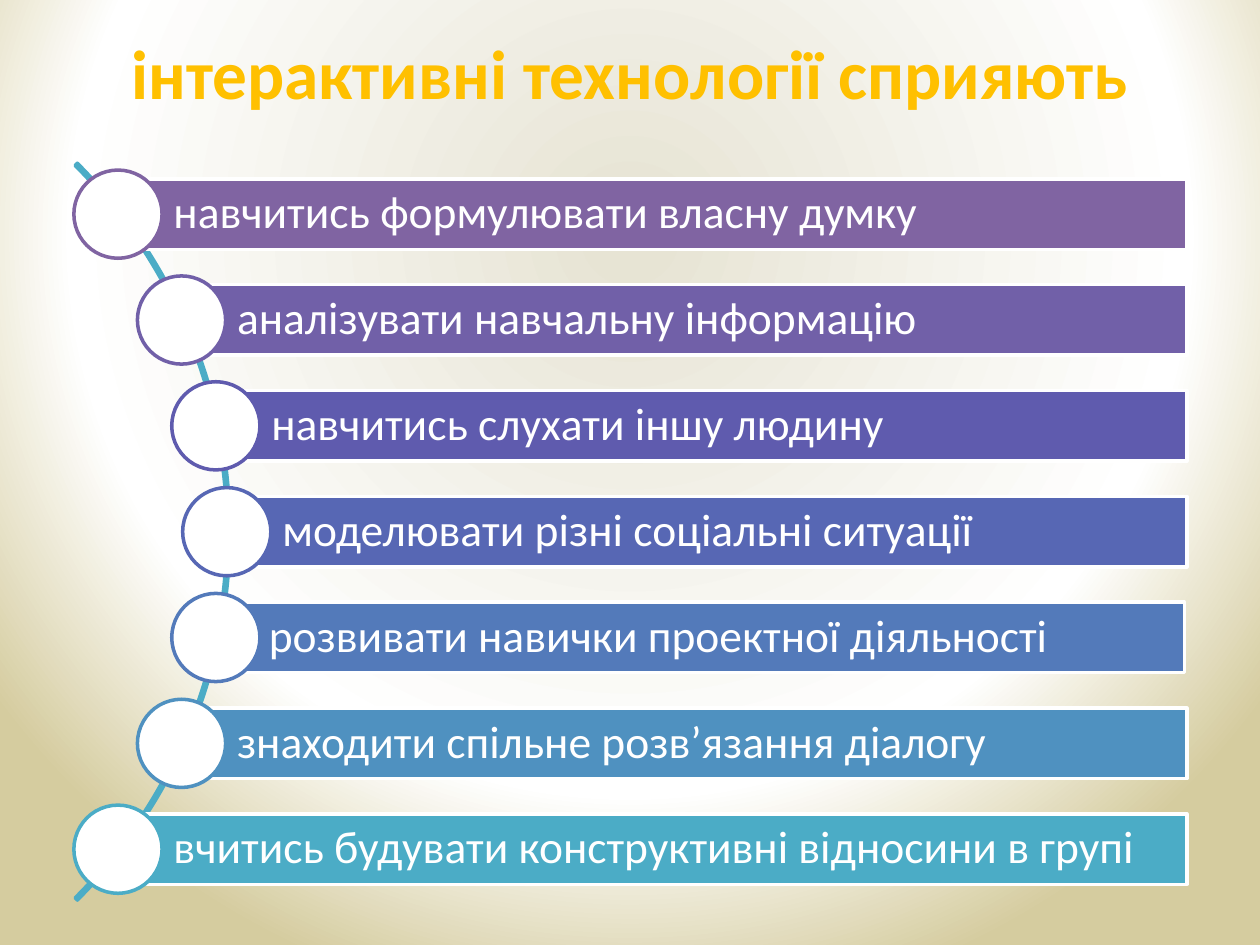
from math import sqrt

from lxml.etree import SubElement
from pptx import Presentation
from pptx.dml.color import RGBColor
from pptx.enum.shapes import MSO_SHAPE
from pptx.enum.text import MSO_ANCHOR, MSO_AUTO_SIZE, PP_ALIGN
from pptx.oxml.ns import qn
from pptx.util import Inches, Pt

TITLE = "інтерактивні технології сприяють"
BENEFITS = [
    ("навчитись формулювати власну думку", "8064A2"),
    ("аналізувати навчальну інформацію", "7160A8"),
    ("навчитись слухати іншу людину", "5F5BAE"),
    ("моделювати різні соціальні ситуації", "5767B4"),
    ("розвивати навички проектної діяльності", "537ABA"),
    ("знаходити спільне розв’язання діалогу", "4F91C0"),
    ("вчитись будувати конструктивні відносини в групі", "4BACC6"),
]
COLORS = {"title": "FFC000", "white": "FFFFFF", "arc": "4BACC6"}
BACKDROP = [(3, "E7E4D4"), (71, "FFFFFF"), (100, "D5CC9F")]
BACKDROP_FOCUS = {"l": 20, "t": 10, "r": 20, "b": 60}

ARC_X, ARC_Y, ARC_SIZE = -2.31, 4.22, 8.27
ORBIT = 4.11
ROW_STEP = 0.84
BAR_HEIGHT, BAR_RIGHT = 0.56, 9.42
CIRCLE = 0.7
NUDGES = {4: -0.02}


def paint_background(page):
    page.background.fill.gradient()
    gradient = page.element.find(".//" + qn("a:gradFill"))
    for child in list(gradient):
        gradient.remove(child)
    stops = SubElement(gradient, qn("a:gsLst"))
    for position, color in BACKDROP:
        stop = SubElement(stops, qn("a:gs"), pos=str(position * 1000))
        SubElement(stop, qn("a:srgbClr"), val=color)
    circle = SubElement(gradient, qn("a:path"), path="circle")
    focus = {side: str(share * 1000) for side, share in BACKDROP_FOCUS.items()}
    SubElement(circle, qn("a:fillToRect"), **focus)


def write(shape, text, size, color, bold=False, align=PP_ALIGN.LEFT,
          spacing=1.0, insets=(0.1, 0.05, 0.1, 0.05)):
    frame = shape.text_frame
    frame.word_wrap = True
    frame.auto_size = MSO_AUTO_SIZE.NONE
    frame.vertical_anchor = MSO_ANCHOR.MIDDLE
    (frame.margin_left, frame.margin_top,
     frame.margin_right, frame.margin_bottom) = map(Inches, insets)
    para = frame.paragraphs[0]
    para.alignment = align
    para.line_spacing = spacing
    span = para.add_run()
    span.text = text
    span.font.name = "Calibri"
    span.font.size = Pt(size)
    span.font.bold = bold
    span.font.color.rgb = RGBColor.from_string(color)


def add_outlined(page, kind, place, line, fill=None):
    shape = page.shapes.add_shape(kind, *map(Inches, place))
    shape.shadow.inherit = False
    if fill:
        shape.fill.solid()
        shape.fill.fore_color.rgb = RGBColor.from_string(fill)
    else:
        shape.fill.background()
    shape.line.color.rgb = RGBColor.from_string(line)
    shape.line.width = Pt(2)
    return shape


def add_benefit(page, row, text, color):
    offset = (row - (len(BENEFITS) - 1) / 2) * ROW_STEP
    x = ARC_X + sqrt(ORBIT ** 2 - offset ** 2)
    y = ARC_Y + offset
    bar_place = (x + NUDGES.get(row, 0), y - BAR_HEIGHT / 2,
                 BAR_RIGHT - x, BAR_HEIGHT)
    bar = add_outlined(page, MSO_SHAPE.RECTANGLE, bar_place,
                       COLORS["white"], color)
    write(bar, text, size=26, color=COLORS["white"], spacing=0.9,
          insets=(0.44, 0.07, 0.07, 0.07))
    circle_place = (x - CIRCLE / 2, y - CIRCLE / 2, CIRCLE, CIRCLE)
    add_outlined(page, MSO_SHAPE.OVAL, circle_place, color, COLORS["white"])


def main():
    deck = Presentation()
    deck.slide_width, deck.slide_height = Inches(10), Inches(7.5)
    page = deck.slides.add_slide(deck.slide_layouts[5])
    paint_background(page)

    title = page.shapes.title
    title.left, title.top, title.width, title.height = map(
        Inches, (0.5, 0.3, 9, 0.54))
    write(title, TITLE, size=39.6, color=COLORS["title"], bold=True,
          align=PP_ALIGN.CENTER)

    arc_place = (ARC_X - ARC_SIZE / 2, ARC_Y - ARC_SIZE / 2, ARC_SIZE, ARC_SIZE)
    arc = add_outlined(page, MSO_SHAPE.BLOCK_ARC, arc_place, COLORS["arc"])
    for index, value in enumerate((189, 27, 0.003)):
        arc.adjustments[index] = value

    for row, (text, color) in enumerate(BENEFITS):
        add_benefit(page, row, text, color)
    deck.save("out.pptx")


if __name__ == "__main__":
    main()
